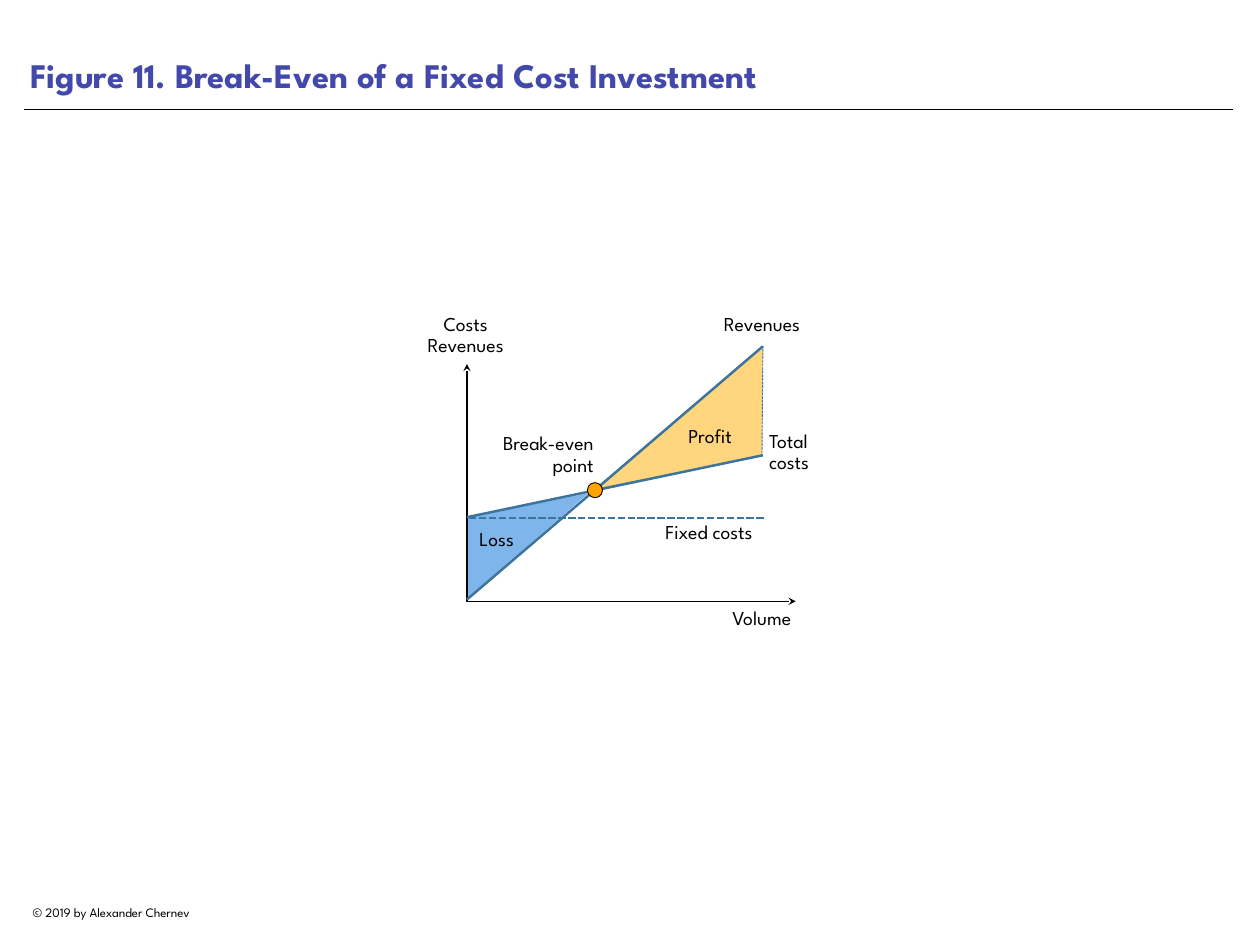
import pptx
import pptx.util
import pptx.dml.color
import pptx.enum.dml
import pptx.enum.shapes
import pptx.enum.text
import pptx.oxml

Inches = pptx.util.Inches
Pt = pptx.util.Pt
RGBColor = pptx.dml.color.RGBColor
DASH = pptx.enum.dml.MSO_LINE
ALIGN = pptx.enum.text.PP_ALIGN

FONT = "League Spartan"
BLACK = RGBColor(0x00, 0x00, 0x00)
TITLE_BLUE = RGBColor(0x43, 0x49, 0xAA)
LINE_BLUE = RGBColor(0x3D, 0x74, 0x9D)
LOSS_BLUE = RGBColor(0x7E, 0xB5, 0xEA)
PROFIT_YELLOW = RGBColor(0xFF, 0xD6, 0x7E)
POINT_ORANGE = RGBColor(0xFF, 0xA4, 0x00)

deck = pptx.Presentation()
deck.slide_width, deck.slide_height = Inches(14.22), Inches(10.67)
slide = deck.slides.add_slide(deck.slide_layouts[5])
shapes = slide.shapes


def write_text(box, text, size, color, align, spacing=1.0, bold=False):
    frame = box.text_frame
    frame.text = text
    for para in frame.paragraphs:
        para.alignment = align
        para.line_spacing = spacing
        for span in para.runs:
            span.font.name = FONT
            span.font.size = Pt(size)
            span.font.bold = bold
            span.font.color.rgb = color


def add_line(start, end, color, width, dash=None, arrow=False):
    line = shapes.add_connector(
        pptx.enum.shapes.MSO_CONNECTOR.STRAIGHT,
        Inches(start[0]), Inches(start[1]), Inches(end[0]), Inches(end[1]))
    line.line.color.rgb = color
    line.line.width = Pt(width)
    if dash is not None:
        line.line.dash_style = dash
    if arrow:
        outline = line.line._get_or_add_ln()
        outline.append(pptx.oxml.parse_xml(
            '<a:tailEnd xmlns:a="http://schemas.openxmlformats.org/drawingml/2006/main"'
            ' type="stealth"/>'))
    properties = line._element.spPr
    properties.append(properties.makeelement(pptx.oxml.ns.qn("a:effectLst"), {}))


# Title and rule below it
title = shapes.title
title.left, title.top = Inches(0.27), Inches(0)
title.width, title.height = Inches(13.64), Inches(1.15)
write_text(title, "Figure 11. Break-Even of a Fixed Cost Investment", 28, TITLE_BLUE,
           ALIGN.LEFT, bold=True)
title_frame = title.text_frame
title_frame.auto_size = pptx.enum.text.MSO_AUTO_SIZE.NONE
title_frame.vertical_anchor = pptx.enum.text.MSO_ANCHOR.BOTTOM
title_frame.margin_left = title_frame.margin_right = Inches(0.07)
title_frame.margin_top = title_frame.margin_bottom = Inches(0.07)
add_line((0.27, 1.24), (13.92, 1.24), BLACK, 0.5)

# Profit and loss areas
areas = [
    ([(6.74, 5.52), (8.61, 3.91), (8.6, 5.15)], PROFIT_YELLOW, True),
    ([(6.64, 5.57), (5.28, 6.75), (5.28, 5.84)], LOSS_BLUE, False),
]
for corners, fill, outlined in areas:
    points = [(Inches(x), Inches(y)) for x, y in corners]
    builder = shapes.build_freeform(*points[0], scale=1.0)
    builder.add_line_segments(points[1:], close=True)
    area = builder.convert_to_shape()
    area.shadow.inherit = False
    area.fill.solid()
    area.fill.fore_color.rgb = fill
    if outlined:
        area.line.color.rgb = LINE_BLUE
        area.line.width = Pt(0.75)
        area.line.dash_style = DASH.SQUARE_DOT
    else:
        area.line.fill.background()

# Axes
add_line((5.27, 6.8), (5.27, 4.11), BLACK, 1, arrow=True)
add_line((5.28, 6.79), (8.98, 6.79), BLACK, 1, arrow=True)

# Fixed costs, total costs and revenues
add_line((8.62, 5.85), (5.27, 5.85), LINE_BLUE, 2, dash=DASH.SQUARE_DOT)
add_line((8.61, 5.14), (5.27, 5.84), LINE_BLUE, 2)
add_line((8.61, 3.91), (5.27, 6.77), LINE_BLUE, 2)

# Break-even point
point = shapes.add_shape(pptx.enum.shapes.MSO_SHAPE.OVAL, Inches(6.63), Inches(5.45),
                         Inches(0.17), Inches(0.17))
point.shadow.inherit = False
point.fill.solid()
point.fill.fore_color.rgb = POINT_ORANGE
point.line.color.rgb = BLACK
point.line.width = Pt(0.75)

# Labels: text, left, top, width, height, alignment, line spacing
labels = [
    ("Costs\nRevenues", 4.63, 3.55, 1.25, 0.53, ALIGN.CENTER, 0.9),
    ("Volume", 7.41, 6.84, 1.52, 0.28, ALIGN.RIGHT, 1.0),
    ("Fixed costs", 7.51, 5.87, 1.25, 0.28, ALIGN.LEFT, 1.0),
    ("Break-even point", 5.45, 4.9, 1.25, 0.53, ALIGN.RIGHT, 0.9),
    ("Total costs", 8.68, 4.87, 0.63, 0.53, ALIGN.LEFT, 0.9),
    ("Revenues", 8.17, 3.55, 1.06, 0.28, ALIGN.LEFT, 0.9),
    ("Profit", 7.7, 4.78, 0.63, 0.28, ALIGN.CENTER, 1.0),
    ("Loss", 5.29, 5.95, 0.63, 0.28, ALIGN.CENTER, 1.0),
]
for text, left, top, width, height, align, spacing in labels:
    label = shapes.add_textbox(Inches(left), Inches(top), Inches(width), Inches(height))
    frame = label.text_frame
    frame.word_wrap = True
    frame.margin_left = frame.margin_right = frame.margin_top = frame.margin_bottom = 0
    write_text(label, text, 16, BLACK, align, spacing)

# Copyright line
footer = shapes.add_textbox(Inches(0.27), Inches(10.16), Inches(2.34), Inches(0.28))
footer.text_frame.word_wrap = True
write_text(footer, "© 2019 by Alexander Chernev", 10.5, BLACK, ALIGN.LEFT)

deck.save("out.pptx")
